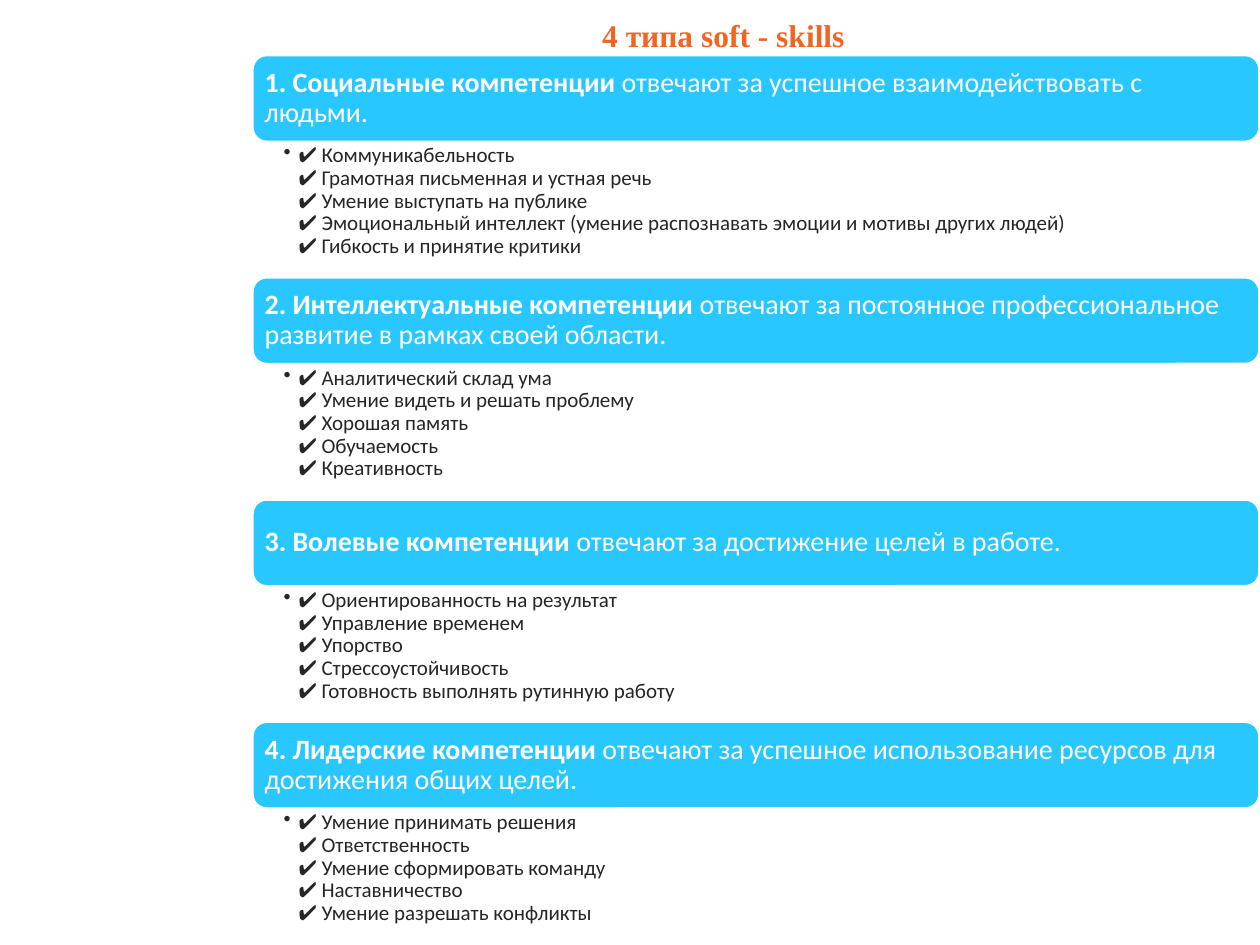
import copy
from dataclasses import dataclass

import pptx
import pptx.dml.color
import pptx.enum.shapes
import pptx.enum.text
import pptx.oxml.ns
import pptx.util
from lxml import etree
from pptx.util import Cm, Pt

LEFT, WIDTH = 5.08, 20.32
TOP, PITCH = 1.1, 4.48
BAR_HEIGHT = 1.77
qn = pptx.oxml.ns.qn


@dataclass
class Competence:
    name: str
    purpose: str
    skills: list[str]


COMPETENCES = [
    Competence("Социальные", "успешное взаимодействовать с людьми.", [
        "Коммуникабельность",
        "Грамотная письменная и устная речь",
        "Умение выступать на публике",
        "Эмоциональный интеллект (умение распознавать эмоции и мотивы других людей)",
        "Гибкость и принятие критики"]),
    Competence("Интеллектуальные", "постоянное профессиональное развитие в рамках своей области.", [
        "Аналитический склад ума",
        "Умение видеть и решать проблему",
        "Хорошая память",
        "Обучаемость",
        "Креативность"]),
    Competence("Волевые", "достижение целей в работе.", [
        "Ориентированность на результат",
        "Управление временем",
        "Упорство",
        "Стрессоустойчивость",
        "Готовность выполнять рутинную работу"]),
    Competence("Лидерские", "успешное использование ресурсов для достижения общих целей.", [
        "Умение принимать решения",
        "Ответственность",
        "Умение сформировать команду",
        "Наставничество",
        "Умение разрешать конфликты"]),
]


def rgb(color: str) -> pptx.dml.color.RGBColor:
    return pptx.dml.color.RGBColor.from_string(color)


def format_run(r, size: float, color: str, bold: bool = False, name: str = "Calibri") -> None:
    r.font.size = Pt(size)
    r.font.name = name
    r.font.bold = bold
    r.font.color.rgb = rgb(color)


def set_margins(tf, left: float, top: float, right: float, bottom: float) -> None:
    tf.margin_left, tf.margin_top = Cm(left), Cm(top)
    tf.margin_right, tf.margin_bottom = Cm(right), Cm(bottom)


def add_bar(s, top: float, number: int, item: Competence) -> None:
    sp = s.shapes.add_shape(pptx.enum.shapes.MSO_SHAPE.ROUNDED_RECTANGLE,
                            Cm(LEFT), Cm(top), Cm(WIDTH), Cm(BAR_HEIGHT))
    sp.shadow.inherit = False
    sp.fill.solid()
    sp.fill.fore_color.rgb = rgb("29C7FF")
    sp.line.color.rgb = rgb("FFFFFF")
    sp.line.width = Pt(2)
    tf = sp.text_frame
    tf.word_wrap = True
    tf.vertical_anchor = pptx.enum.text.MSO_ANCHOR.MIDDLE
    set_margins(tf, 0.17, 0.17, 0.17, 0.17)
    p = tf.paragraphs[0]
    p.text = f"{number}. {item.name} компетенции"
    p.add_run().text = f" отвечают за {item.purpose}"
    p.alignment = pptx.enum.text.PP_ALIGN.LEFT
    p.line_spacing = 0.9
    for r, bold in zip(p.runs, (True, False)):
        format_run(r, 16, "FFFFFF", bold)


def add_skills(s, top: float, skills: list[str]) -> None:
    """Add one bulleted paragraph whose skills are parted by line breaks."""
    sp = s.shapes.add_textbox(Cm(LEFT), Cm(top), Cm(WIDTH), Cm(PITCH - BAR_HEIGHT))
    tf = sp.text_frame
    tf.word_wrap = True
    set_margins(tf, 0.64, 0.05, 0.3, 0.05)
    p = tf.paragraphs[0]
    p.text = "\v".join(f"✔ {skill}" for skill in skills)
    p.level = 1
    pPr = p._p.get_or_add_pPr()
    pPr.set("marL", str(Cm(0.3)))
    pPr.set("indent", str(-Cm(0.3)))
    etree.SubElement(pPr, qn("a:buChar")).set("char", "•")
    p.line_spacing = 0.9
    for r in p.runs:
        format_run(r, 12, "262626")
    for br in p._p.findall(qn("a:br")):
        br.append(copy.deepcopy(p.runs[0]._r.find(qn("a:rPr"))))


def add_title(s, text: str) -> None:
    sp = s.shapes.add_textbox(Cm(11.89), Cm(0.08), Cm(5.61), Cm(1.14))
    tf = sp.text_frame
    tf.word_wrap = True
    tf.text = text
    p = tf.paragraphs[0]
    p.alignment = pptx.enum.text.PP_ALIGN.JUSTIFY
    p.line_spacing = 1.15
    format_run(p.runs[0], 18, "F16522", True, "Times New Roman")


def main() -> None:
    prs = pptx.Presentation()
    prs.slide_width, prs.slide_height = Cm(25.4), Cm(19.05)
    s = prs.slides.add_slide(prs.slide_layouts[6])
    for i, item in enumerate(COMPETENCES):
        top = TOP + i * PITCH
        add_bar(s, top, i + 1, item)
        add_skills(s, top + BAR_HEIGHT, item.skills)
    add_title(s, "4 типа soft - skills")
    prs.save("out.pptx")


if __name__ == "__main__":
    main()
